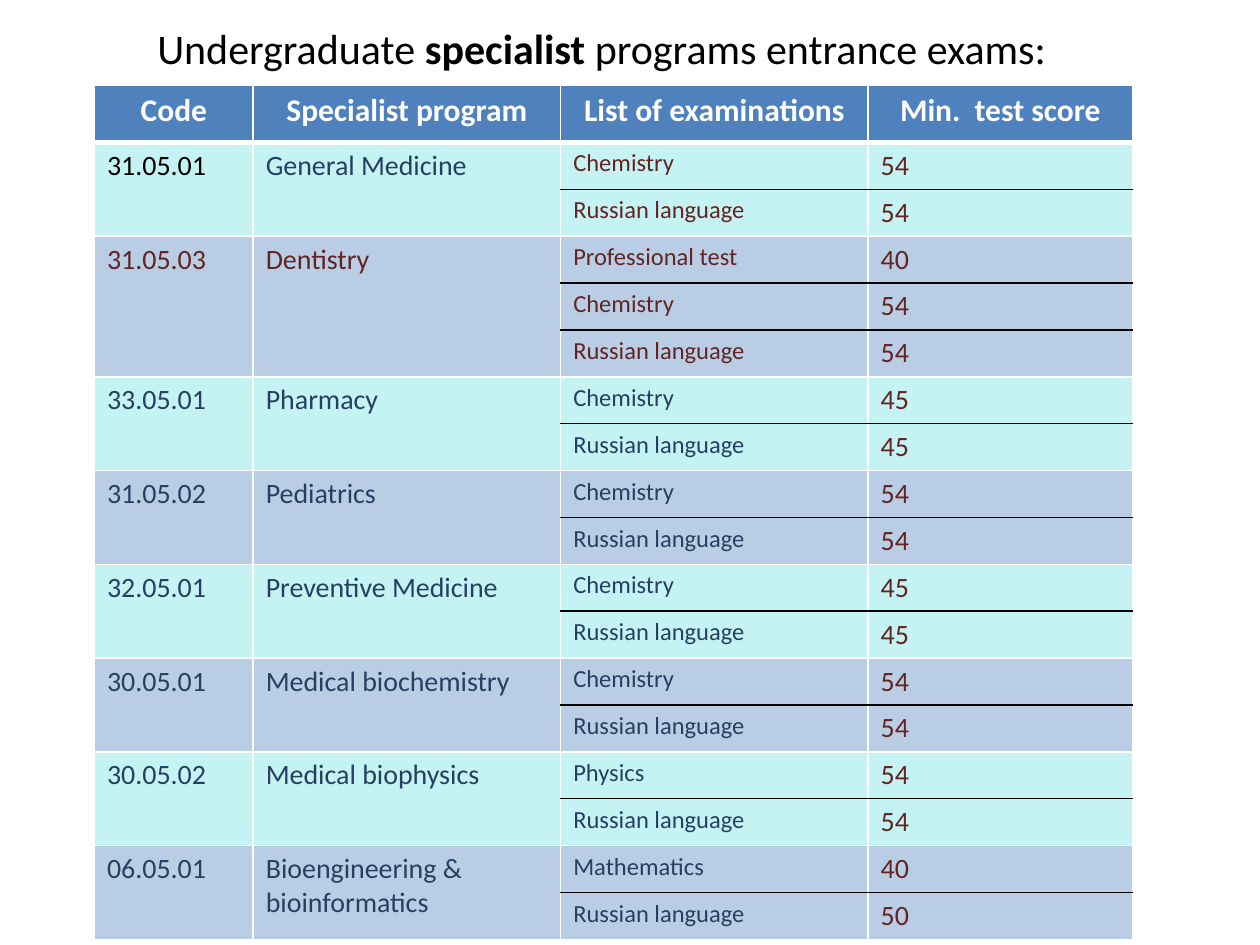
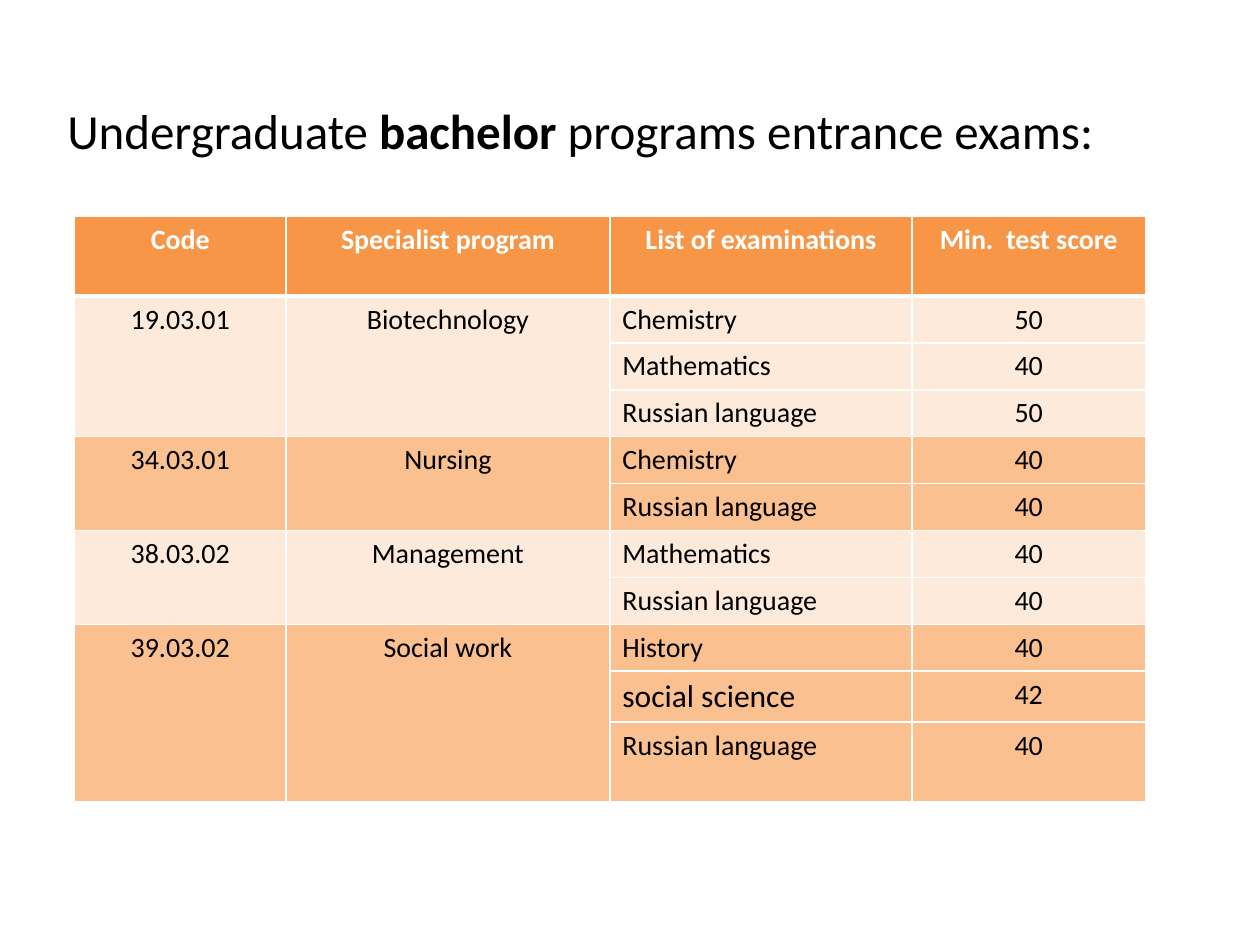
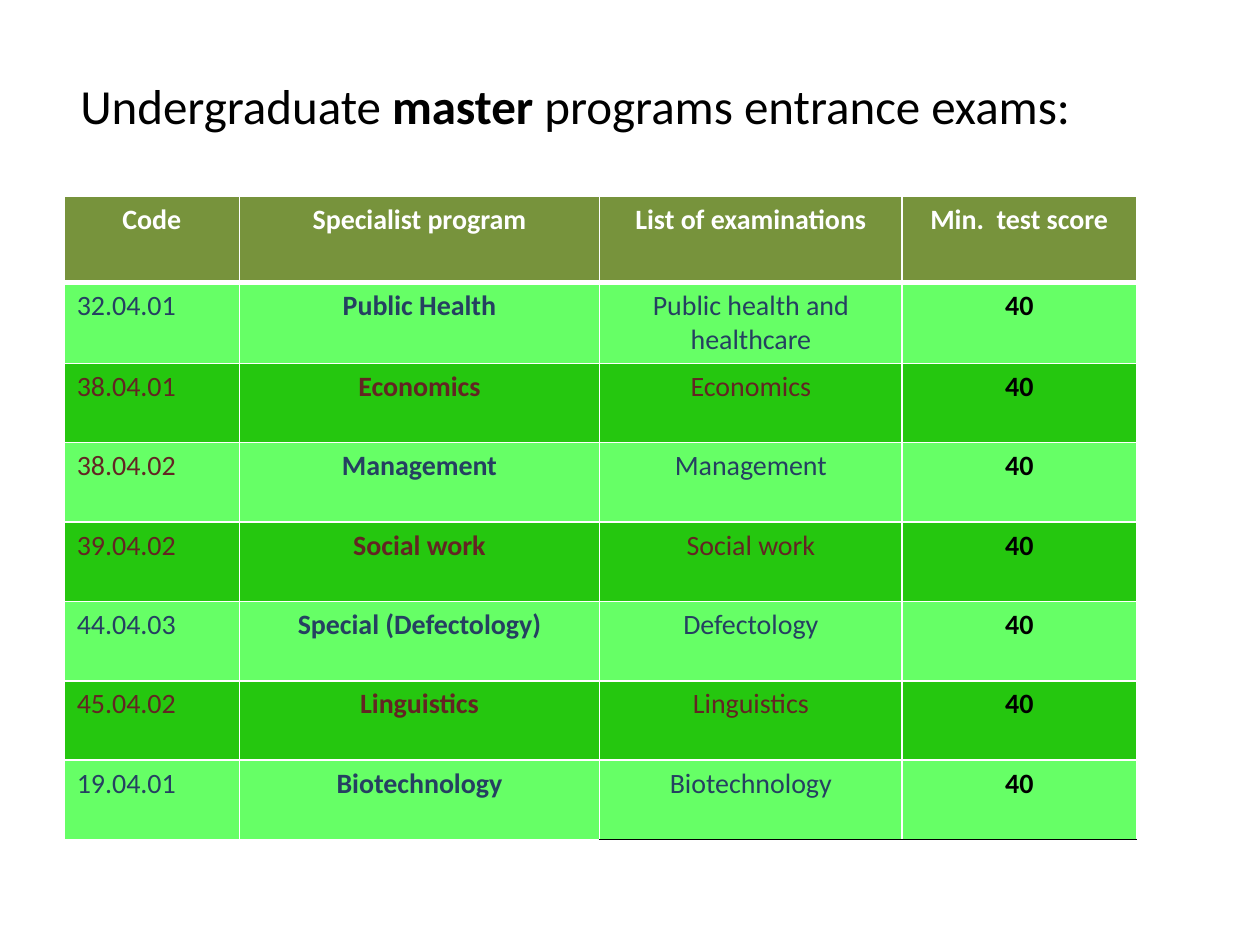
import pptx
import pptx.dml.color
import pptx.enum.text
import pptx.oxml
import pptx.oxml.ns
import pptx.util
import lxml.etree

Inches, Pt = pptx.util.Inches, pptx.util.Pt
RGBColor = pptx.dml.color.RGBColor
LEFT, CENTER = pptx.enum.text.PP_ALIGN.LEFT, pptx.enum.text.PP_ALIGN.CENTER

FONT = "Calibri"
COLORS = {
    "black": "000000", "white": "FFFFFF", "navy": "254061", "maroon": "632523",
    "blue": "4F81BD", "aqua": "C5F2F3", "pale blue": "B9CDE5",
    "orange": "F79646", "cream": "FDEADA", "peach": "FAC090",
    "olive": "77933C", "light green": "66FF66", "green": "25C70F",
}
HEADERS = ["Code", "Specialist program", "List of examinations", "Min.  test score"]
RUSSIAN = "Russian language"

# Inks are the text colours of the four columns.
NAVY_INKS = ["navy", "navy", "navy", "maroon"]
BLACK_INKS = ["black"] * 4
MASTER_NAVY = ["navy", "navy", "navy", "black"]
MASTER_MAROON = ["maroon", "maroon", "maroon", "black"]

# Each program: code, name, [(examination, minimum score)], inks.
SPECIALIST = [
    ("31.05.01", "General Medicine", [("Chemistry", 54), (RUSSIAN, 54)],
     ["black", "navy", "maroon", "maroon"]),
    ("31.05.03", "Dentistry", [("Professional test", 40), ("Chemistry", 54), (RUSSIAN, 54)],
     ["maroon"] * 4),
    ("33.05.01", "Pharmacy", [("Chemistry", 45), (RUSSIAN, 45)], NAVY_INKS),
    ("31.05.02", "Pediatrics", [("Chemistry", 54), (RUSSIAN, 54)], NAVY_INKS),
    ("32.05.01", "Preventive Medicine", [("Chemistry", 45), (RUSSIAN, 45)], NAVY_INKS),
    ("30.05.01", "Medical biochemistry", [("Chemistry", 54), (RUSSIAN, 54)], NAVY_INKS),
    ("30.05.02", "Medical biophysics", [("Physics", 54), (RUSSIAN, 54)], NAVY_INKS),
    ("06.05.01", "Bioengineering & bioinformatics", [("Mathematics", 40), (RUSSIAN, 50)],
     NAVY_INKS),
]
BACHELOR = [
    ("19.03.01", "Biotechnology", [("Chemistry", 50), ("Mathematics", 40), (RUSSIAN, 50)],
     BLACK_INKS),
    ("34.03.01", "Nursing", [("Chemistry", 40), (RUSSIAN, 40)], BLACK_INKS),
    ("38.03.02", "Management", [("Mathematics", 40), (RUSSIAN, 40)], BLACK_INKS),
    ("39.03.02", "Social work", [("History", 40), ("social science", 42), (RUSSIAN, 40)],
     BLACK_INKS),
]
MASTER = [
    ("32.04.01", "Public Health", [("Public health and healthcare", 40)], MASTER_NAVY),
    ("38.04.01", "Economics", [("Economics", 40)], MASTER_MAROON),
    ("38.04.02", "Management", [("Management", 40)], ["maroon", "navy", "navy", "black"]),
    ("39.04.02", "Social work", [("Social work", 40)], MASTER_MAROON),
    ("44.04.03", "Special (Defectology)", [("Defectology", 40)], MASTER_NAVY),
    ("45.04.02", "Linguistics", [("Linguistics", 40)], MASTER_MAROON),
    ("19.04.01", "Biotechnology", [("Biotechnology", 40)], MASTER_NAVY),
]

SLIDES = [
    {
        "level": "specialist", "title box": (0.91, 0.13, 7.73, 0.5), "title size": 24,
        "origin": (0.75, 0.68), "columns": [1.26, 2.44, 2.44, 2.1],
        "rows": [0.45] + [0.35] * 17, "programs": SPECIALIST,
        "header fill": "blue", "bands": ["aqua", "pale blue"], "header size": 18,
        "sizes": [16, 16, 14, 16], "aligns": [LEFT] * 4, "bold": [False] * 4,
        "black rules": {2, 4, 5, 7, 9, 11, 13, 15, 17},
    },
    {
        "level": "bachelor", "title box": (0.39, 0.75, 8.43, 0.88), "title size": 28,
        "origin": (0.59, 1.72), "columns": [1.68, 2.57, 2.4, 1.85],
        "rows": [0.63] + [0.35] * 9 + [0.63], "programs": BACHELOR,
        "header fill": "orange", "bands": ["cream", "peach"], "header size": 16,
        "sizes": [16] * 4, "aligns": [CENTER, CENTER, LEFT, CENTER], "bold": [False] * 4,
        "black rules": set(), "larger": {"social science": 18},
    },
    {
        "level": "master", "title box": (0.51, 0.55, 8.11, 0.57), "title size": 28,
        "origin": (0.51, 1.56), "columns": [1.39, 2.86, 2.4, 1.86],
        "rows": [0.68] + [0.63] * 7, "programs": MASTER,
        "header fill": "olive", "bands": ["light green", "green"], "header size": 16,
        "sizes": [16] * 4, "aligns": [LEFT, CENTER, CENTER, CENTER],
        "bold": [False, True, False, True], "black rules": {8},
    },
]


def write_cell(cell, text, size, color, bold, align):
    cell.text_frame.text = text
    paragraph = cell.text_frame.paragraphs[0]
    paragraph.alignment = align
    font = paragraph.runs[0].font
    font.name, font.size, font.bold = FONT, Pt(size), bold
    font.color.rgb = RGBColor.from_string(COLORS[color])


def paint_cell(cell, fill, top, bottom):
    """Set the fill and four borders; top and bottom are (colour, points)."""
    properties = cell._tc.get_or_add_tcPr()
    side = ("white", 1)
    for tag, (color, points) in zip(("a:lnL", "a:lnR", "a:lnT", "a:lnB"),
                                    (side, side, top, bottom)):
        line = lxml.etree.SubElement(properties, pptx.oxml.ns.qn(tag), w=str(Pt(points)))
        solid = lxml.etree.SubElement(line, pptx.oxml.ns.qn("a:solidFill"))
        lxml.etree.SubElement(solid, pptx.oxml.ns.qn("a:srgbClr"), val=COLORS[color])
    cell.fill.solid()
    cell.fill.fore_color.rgb = RGBColor.from_string(COLORS[fill])


presentation = pptx.Presentation()
presentation.slide_width, presentation.slide_height = Inches(10), Inches(7.5)

for content in SLIDES:
    slide = presentation.slides.add_slide(presentation.slide_layouts[5])

    title = slide.shapes.title
    title.left, title.top, title.width, title.height = map(Inches, content["title box"])
    frame = title.text_frame
    frame.auto_size = pptx.enum.text.MSO_AUTO_SIZE.NONE
    frame.vertical_anchor = pptx.enum.text.MSO_ANCHOR.TOP
    paragraph = frame.paragraphs[0]
    paragraph.alignment = CENTER
    for text in ("Undergraduate ", content["level"], " programs entrance exams:"):
        run = paragraph.add_run()
        run.text = text
        run.font.name, run.font.size = FONT, Pt(content["title size"])
        run.font.bold = text == content["level"]
        run.font.color.rgb = RGBColor.from_string(COLORS["black"])

    widths, heights = content["columns"], content["rows"]
    table = slide.shapes.add_table(
        len(heights), len(widths), *map(Inches, content["origin"]),
        Inches(sum(widths)), Inches(sum(heights))).table
    for column, width in zip(table.columns, widths):
        column.width = Inches(width)
    for row, height in zip(table.rows, heights):
        row.height = Inches(height)

    # A rule is numbered by the row below it; black ones cross the last two columns.
    fills = [content["header fill"]]
    for number, program in enumerate(content["programs"]):
        fills += [content["bands"][number % 2]] * len(program[2])
    for row, fill in enumerate(fills):
        for column in range(len(widths)):
            top, bottom = [
                ("white", 3) if rule == 1
                else ("black" if column >= 2 and rule in content["black rules"] else "white", 1)
                for rule in (row, row + 1)]
            paint_cell(table.cell(row, column), fill, top, bottom)

    for column, header in enumerate(HEADERS):
        write_cell(table.cell(0, column), header, content["header size"], "white", True, CENTER)

    first_row = 1
    for code, name, exams, inks in content["programs"]:
        last_row = first_row + len(exams) - 1
        entries = [(first_row, 0, code), (first_row, 1, name)]
        for row, (exam, score) in enumerate(exams, first_row):
            entries += [(row, 2, exam), (row, 3, str(score))]
        for row, column, text in entries:
            size = content.get("larger", {}).get(text, content["sizes"][column])
            write_cell(table.cell(row, column), text, size, inks[column],
                       content["bold"][column], content["aligns"][column])
        if last_row > first_row:
            for column in (0, 1):
                table.cell(first_row, column).merge(table.cell(last_row, column))
        first_row = last_row + 1

presentation.save("out.pptx")
